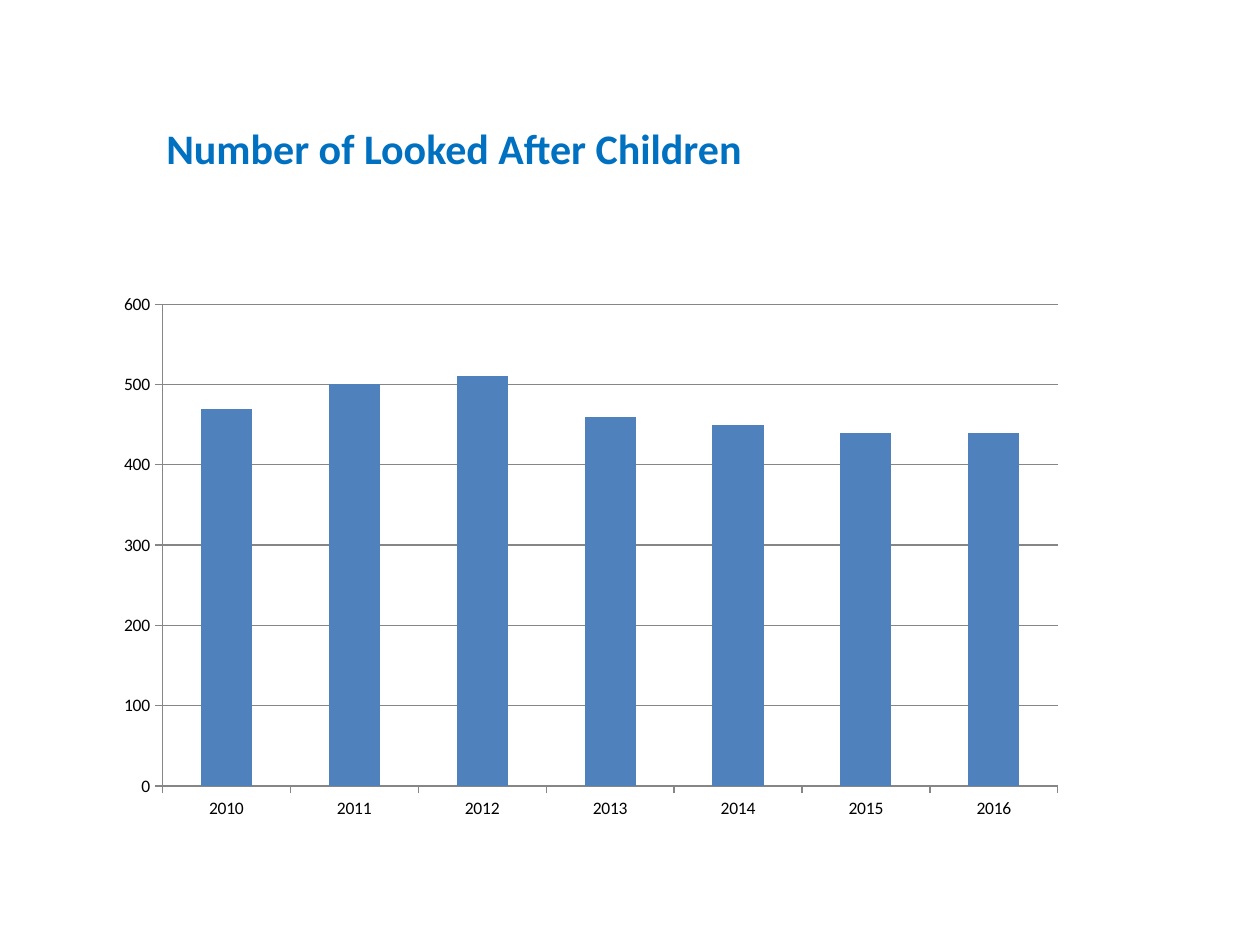
from pptx import Presentation
from pptx.chart.data import CategoryChartData
from pptx.dml.color import RGBColor
from pptx.enum.chart import XL_CHART_TYPE as ChartType, XL_TICK_MARK as TickMark
from pptx.enum.text import MSO_ANCHOR as Anchor, MSO_AUTO_SIZE as AutoSize, PP_ALIGN as Align
from pptx.util import Inches, Pt

COLORS = {"title": "0070C0", "bar": "4F81BD", "line": "868686", "label": "000000"}
FONT = "Calibri"
CHILDREN = {"2010": 470, "2011": 500, "2012": 510, "2013": 460,
            "2014": 450, "2015": 440, "2016": 440}


def write_text(frame, text, *, size, color, bold=False, align=Align.LEFT):
    para = frame.paragraphs[0]
    para.alignment = align
    span = para.add_run()
    span.text = text
    span.font.name = FONT
    span.font.size = Pt(size)
    span.font.bold = bold
    span.font.color.rgb = RGBColor.from_string(COLORS[color])


deck = Presentation()
deck.slide_width, deck.slide_height = Inches(10), Inches(7.5)
page = deck.slides.add_slide(deck.slide_layouts[5])

# Column chart
data = CategoryChartData()
data.categories = list(CHILDREN)
data.add_series("Series 1", list(CHILDREN.values()))
chart = page.shapes.add_chart(ChartType.COLUMN_CLUSTERED, Inches(0.83), Inches(2.25),
                              Inches(7.72), Inches(4.33), data).chart
chart.has_title = False
chart.has_legend = False
chart.font.name = FONT
chart.font.size = Pt(10)
chart.font.color.rgb = RGBColor.from_string(COLORS["label"])

plot = chart.plots[0]
plot.gap_width = 150
plot.vary_by_categories = False
bars = plot.series[0].format.fill
bars.solid()
bars.fore_color.rgb = RGBColor.from_string(COLORS["bar"])

# Axes and gridlines
years, counts = chart.category_axis, chart.value_axis
counts.minimum_scale, counts.maximum_scale, counts.major_unit = 0, 600, 100
counts.has_major_gridlines = True
for axis in (years, counts):
    axis.major_tick_mark = TickMark.OUTSIDE
    axis.minor_tick_mark = TickMark.NONE
for part in (years, counts, counts.major_gridlines):
    part.format.line.width = Pt(0.75)
    part.format.line.color.rgb = RGBColor.from_string(COLORS["line"])

# Title
title = page.shapes.title
title.left, title.top = Inches(1.22), Inches(0.92)
title.width, title.height = Inches(5.98), Inches(0.5)
title.text_frame.word_wrap = True
title.text_frame.auto_size = AutoSize.SHAPE_TO_FIT_TEXT
title.text_frame.vertical_anchor = Anchor.TOP
write_text(title.text_frame, "Number of Looked After Children",
           size=24, color="title", bold=True)

deck.save("out.pptx")
